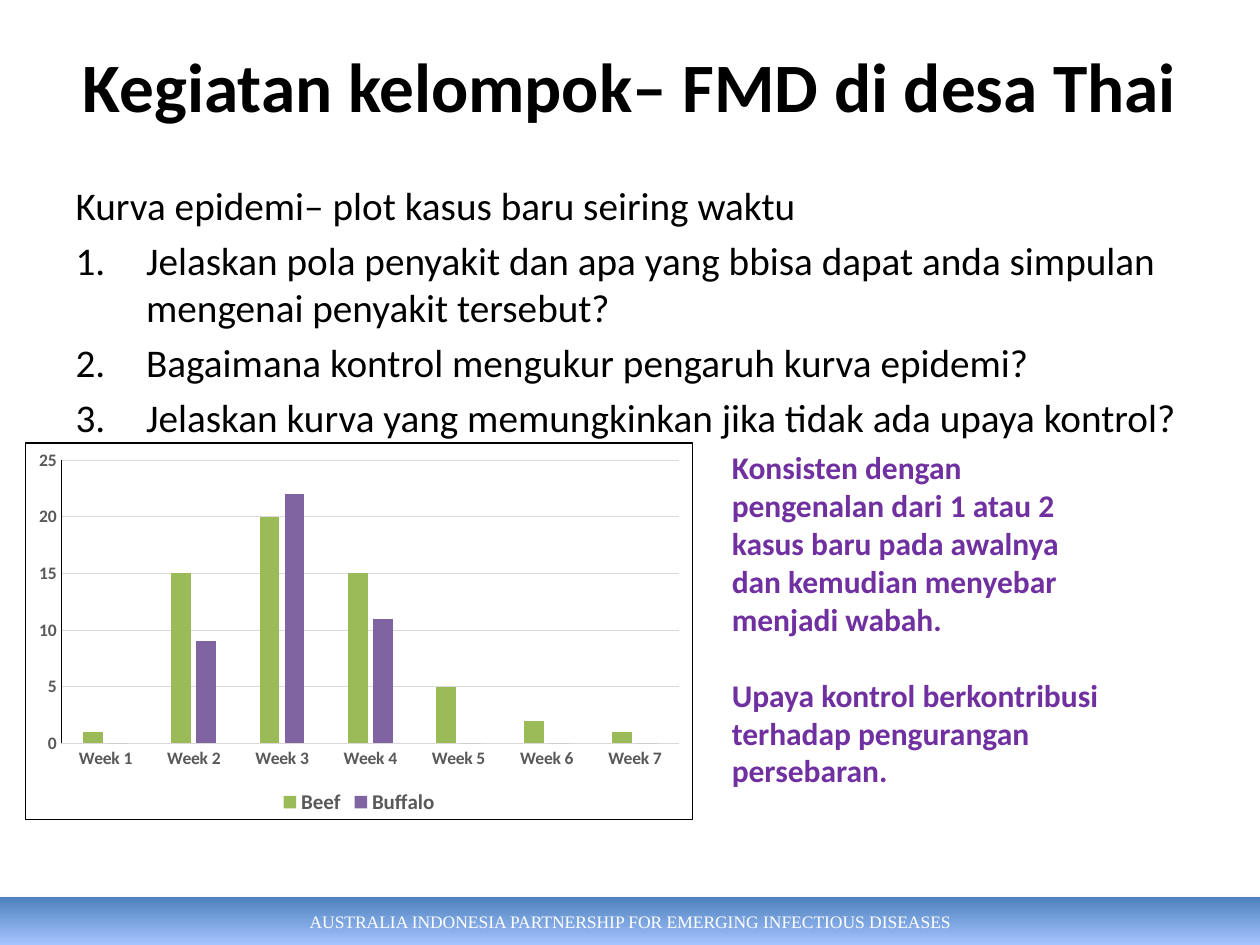
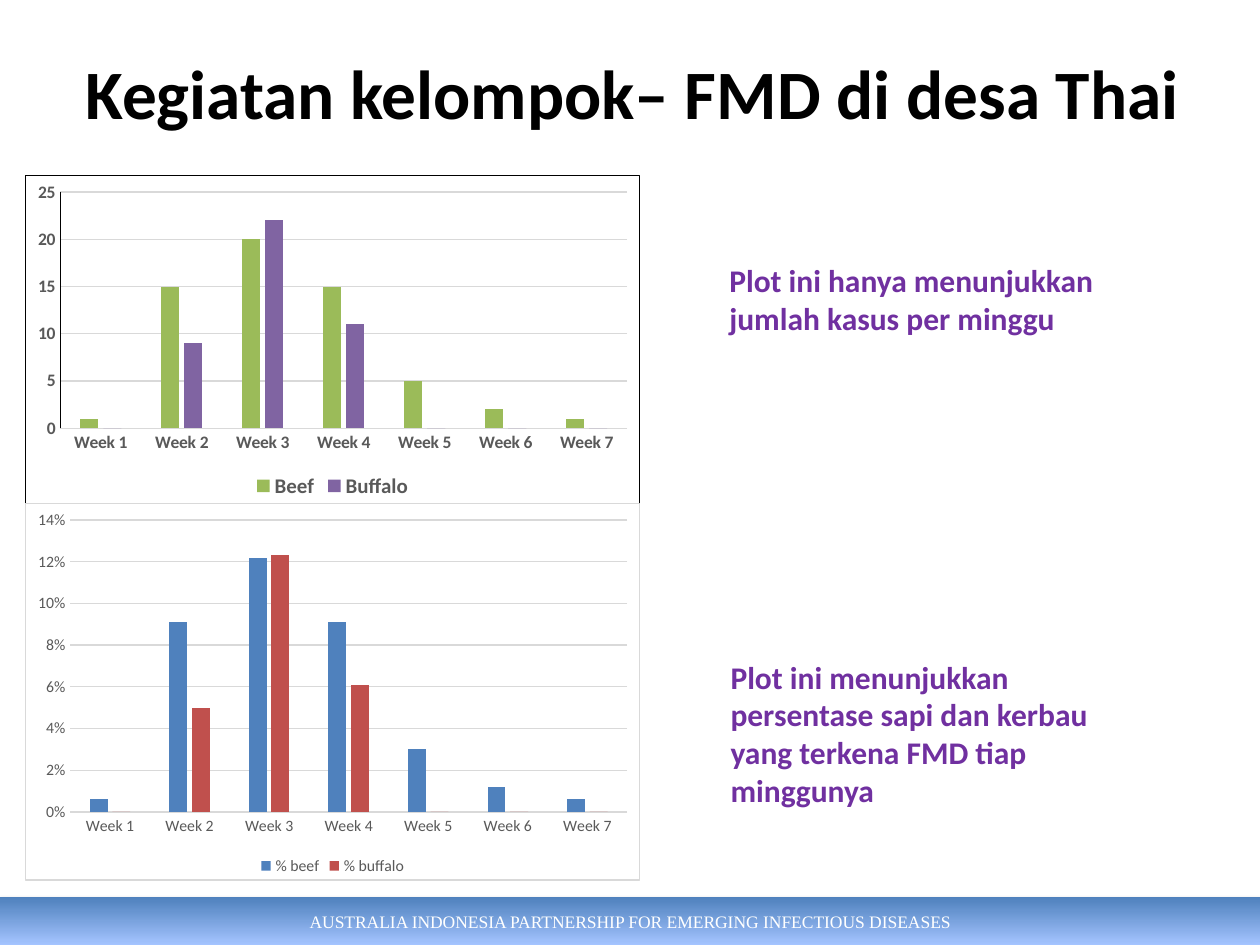
from dataclasses import dataclass

from lxml import etree
from pptx import Presentation
from pptx import util as u
from pptx.chart import data as chart_data
from pptx.dml.color import RGBColor
from pptx.enum import chart as charts, shapes, text
from pptx.oxml import ns, parse_xml


@dataclass(frozen=True)
class Theme:
    """Colours, fonts and type sizes shared by the slides."""
    font: str = "Calibri"
    band_font: str = "Times New Roman"
    ink: str = "000000"
    paper: str = "FFFFFF"
    comment: str = "7030A0"
    label: str = "595959"
    rule: str = "D9D9D9"
    blue: str = "4F81BD"
    pale_blue: str = "A4C4FF"
    red: str = "C0504D"
    green: str = "9BBB59"
    purple: str = "8064A2"
    title_size: float = 39.6
    body_size: float = 22.4
    comment_size: float = 18
    band_size: float = 10
    hairline: float = 0.75


@dataclass(frozen=True)
class ChartLook:
    """What differs between the count chart and the percentage chart."""
    colors: tuple
    border: str
    axis_line: str
    axis_size: float
    legend_size: float
    bold: bool
    number_format: str
    top: float
    step: float


THEME = Theme()
COUNT_LOOK = ChartLook((THEME.green, THEME.purple), THEME.ink, THEME.ink,
                       10, 12, True, "General", 25, 5)
SHARE_LOOK = ChartLook((THEME.blue, THEME.red), THEME.rule, "",
                       9, 9, False, "0%", 0.14, 0.02)

TITLE = "Kegiatan kelompok– FMD di desa Thai"
PARTNERSHIP = "AUSTRALIA INDONESIA PARTNERSHIP FOR EMERGING INFECTIOUS DISEASES"
INTRO = "Kurva epidemi– plot kasus baru seiring waktu"
QUESTIONS = [
    "Jelaskan pola penyakit dan apa yang bbisa dapat anda simpulan mengenai penyakit tersebut?",
    "Bagaimana kontrol mengukur pengaruh kurva epidemi?",
    "Jelaskan kurva yang memungkinkan jika tidak ada upaya kontrol?",
]
FINDINGS = [
    "Konsisten dengan pengenalan dari 1 atau 2 kasus baru pada awalnya dan kemudian menyebar menjadi wabah.",
    "Upaya kontrol berkontribusi terhadap pengurangan persebaran.",
]
COUNT_COMMENT = "Plot ini hanya menunjukkan jumlah kasus per minggu"
SHARE_COMMENT = "Plot ini menunjukkan persentase sapi dan kerbau yang terkena FMD tiap minggunya"
WEEKS = [f"Week {number}" for number in range(1, 8)]
CASES = {"Beef": (1, 15, 20, 15, 5, 2, 1), "Buffalo": (0, 9, 22, 11, 0, 0, 0)}
SHARES = {
    "% beef": (0.006, 0.091, 0.122, 0.091, 0.03, 0.012, 0.006),
    "% buffalo": (0, 0.05, 0.123, 0.061, 0, 0, 0),
}


def rgb(code):
    """Turn a hex code into a colour."""
    return RGBColor.from_string(code)


def inches(*lengths):
    """Turn numbers into lengths."""
    return [u.Inches(length) for length in lengths]


def style_font(font, size, color, bold=False, name=THEME.font):
    """Set face, size, colour and weight."""
    font.name, font.size, font.bold = name, u.Pt(size), bold
    font.color.rgb = rgb(color)


def style_line(line, color):
    """Draw a hairline, or none when there is no colour."""
    if color:
        line.color.rgb, line.width = rgb(color), u.Pt(THEME.hairline)
    else:
        line.fill.background()


def place(shape, box):
    """Move and size a shape."""
    shape.left, shape.top, shape.width, shape.height = inches(*box)


def add_band(prs, slide):
    """Build the footer band and hand it to the slide master."""
    band = slide.shapes.add_shape(shapes.MSO_SHAPE.RECTANGLE, *inches(0, 7.12, 10, 0.38))
    band.fill.gradient()
    band.fill.gradient_angle = 270
    for stop, color in zip(band.fill.gradient_stops, (THEME.blue, THEME.pale_blue)):
        stop.color.rgb = rgb(color)
    band.line.fill.background()
    band.shadow.inherit = False
    effects = band.element.spPr.find(ns.qn("a:effectLst"))
    shade = etree.SubElement(effects, ns.qn("a:outerShdw"), blurRad=str(u.Pt(3.1)),
                             dist=str(u.Pt(1.8)), dir="5400000", rotWithShape="0")
    tint = etree.SubElement(shade, ns.qn("a:srgbClr"), val=THEME.ink)
    etree.SubElement(tint, ns.qn("a:alpha"), val="35000")
    band.text_frame.vertical_anchor = text.MSO_ANCHOR.MIDDLE
    wording = band.text_frame.paragraphs[0]
    wording.text, wording.alignment = PARTNERSHIP, text.PP_ALIGN.CENTER
    style_font(wording.font, THEME.band_size, THEME.paper, name=THEME.band_font)
    prs.slide_master.shapes.element.insert(2, band.element)


def set_title(slide, box):
    """Fill and place the slide title."""
    heading = slide.shapes.title
    place(heading, box)
    frame = heading.text_frame
    frame.text = TITLE
    frame.auto_size = text.MSO_AUTO_SIZE.NONE
    frame.vertical_anchor = text.MSO_ANCHOR.MIDDLE
    frame.paragraphs[0].alignment = text.PP_ALIGN.CENTER
    style_font(frame.paragraphs[0].font, THEME.title_size, THEME.ink, bold=True)


def set_questions(slide, box):
    """Fill the body with an introduction and numbered questions."""
    body = slide.placeholders[1]
    place(body, box)
    frame = body.text_frame
    frame.text = "\n".join([INTRO, *QUESTIONS])
    frame.auto_size = text.MSO_AUTO_SIZE.NONE
    for index, line in enumerate(frame.paragraphs):
        indent = u.Inches(0.56) if index else 0
        properties = line._p.get_or_add_pPr()
        properties.set("marL", str(indent))
        properties.set("indent", str(-indent))
        if index:
            etree.SubElement(properties, ns.qn("a:buFont"), typeface="+mj-lt")
            etree.SubElement(properties, ns.qn("a:buAutoNum"), type="arabicPeriod")
        else:
            etree.SubElement(properties, ns.qn("a:buNone"))
        line.space_before = u.Pt(4.5 if index else 0)
        style_font(line.font, THEME.body_size, THEME.ink)


def add_comment(slide, box, *remarks):
    """Add purple remarks beside a chart."""
    frame = slide.shapes.add_textbox(*inches(*box)).text_frame
    frame.word_wrap = True
    frame.auto_size = text.MSO_AUTO_SIZE.SHAPE_TO_FIT_TEXT
    frame.text = "\n".join(remarks)
    for index, remark in enumerate(frame.paragraphs):
        if index:
            remark.space_before = u.Pt(22)
        style_font(remark.font, THEME.comment_size, THEME.comment, bold=True)


def frame_chart(chart, border):
    """Give the chart area a white fill and a thin border."""
    area = parse_xml(
        f'<c:spPr {ns.nsdecls("c", "a")}>'
        f'<a:solidFill><a:srgbClr val="{THEME.paper}"/></a:solidFill>'
        f'<a:ln w="{u.Pt(THEME.hairline)}"><a:solidFill>'
        f'<a:srgbClr val="{border}"/></a:solidFill></a:ln></c:spPr>')
    chart.element.find(ns.qn("c:chart")).addnext(area)


def add_weekly_chart(slide, box, rows, look):
    """Add clustered columns for each week."""
    weekly = chart_data.CategoryChartData(number_format=look.number_format)
    weekly.categories = WEEKS
    for name, values in rows.items():
        weekly.add_series(name, values)
    chart = slide.shapes.add_chart(
        charts.XL_CHART_TYPE.COLUMN_CLUSTERED, *inches(*box), weekly).chart
    style_font(chart.font, 10, THEME.ink)
    frame_chart(chart, look.border)
    chart.has_title = False

    chart.has_legend = True
    chart.legend.position = charts.XL_LEGEND_POSITION.BOTTOM
    chart.legend.include_in_layout = False
    style_font(chart.legend.font, look.legend_size, THEME.label, look.bold)

    columns = chart.plots[0]
    columns.gap_width, columns.overlap, columns.vary_by_categories = 219, -27, False
    for series, color in zip(columns.series, look.colors):
        series.format.fill.solid()
        series.format.fill.fore_color.rgb = rgb(color)

    weeks, scale = chart.category_axis, chart.value_axis
    for axis, color in ((weeks, THEME.rule), (scale, look.axis_line)):
        axis.major_tick_mark = axis.minor_tick_mark = charts.XL_TICK_MARK.NONE
        style_font(axis.tick_labels.font, look.axis_size, THEME.label, look.bold)
        style_line(axis.format.line, color)
    scale.minimum_scale, scale.maximum_scale, scale.major_unit = 0, look.top, look.step
    scale.has_major_gridlines = True
    style_line(scale.major_gridlines.format.line, THEME.rule)
    scale.tick_labels.number_format = look.number_format
    scale.tick_labels.number_format_is_linked = False


def main():
    """Build both slides and save them."""
    prs = Presentation()
    prs.slide_width, prs.slide_height = inches(10, 7.5)

    curve = prs.slides.add_slide(prs.slide_layouts[1])
    add_band(prs, curve)
    set_title(curve, (0.5, 0.21, 9, 0.93))
    set_questions(curve, (0.5, 1.39, 9, 1.81))
    add_weekly_chart(curve, (0.2, 3.51, 5.3, 3), CASES, COUNT_LOOK)
    add_comment(curve, (5.71, 3.51, 3.23, 2.83), *FINDINGS)

    comparison = prs.slides.add_slide(prs.slide_layouts[5])
    set_title(comparison, (0.52, 0.3, 9, 0.85))
    add_weekly_chart(comparison, (0.2, 1.39, 4.88, 2.61), CASES, COUNT_LOOK)
    add_comment(comparison, (5.69, 2.02, 3.23, 0.71), COUNT_COMMENT)
    add_weekly_chart(comparison, (0.2, 3.99, 4.88, 3), SHARES, SHARE_LOOK)
    add_comment(comparison, (5.7, 5.17, 3.23, 1.31), SHARE_COMMENT)

    prs.save("out.pptx")


if __name__ == "__main__":
    main()
